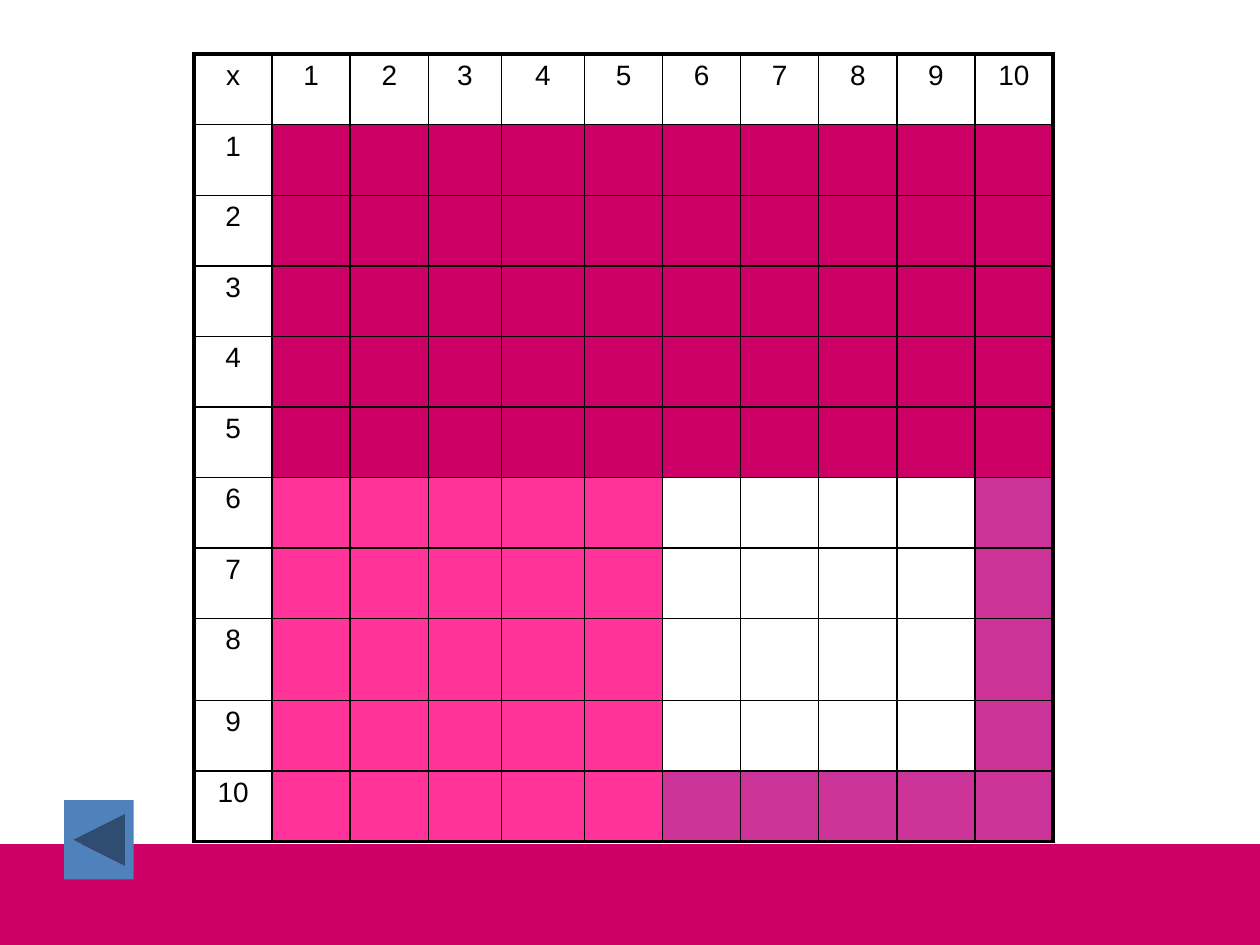
"""Build a slide with a shaded 10 by 10 multiplication grid and a back button."""
import lxml.etree
import pptx
import pptx.dml.color
import pptx.enum.shapes
import pptx.enum.text
import pptx.oxml.ns
import pptx.util

CRIMSON, PINK, PURPLE, BLUE, BLACK = "CC0066", "FF3399", "CC3399", "4F81BD", "000000"
HEADINGS = ["x"] + [str(number) for number in range(1, 11)]
COUNT = len(HEADINGS)
LAST = COUNT - 1
THIN, THICK = 1, 2.25


def paint(fill, colour):
    fill.solid()
    fill.fore_color.rgb = pptx.dml.color.RGBColor.from_string(colour)


def add_border(cell, side, points):
    name = pptx.oxml.ns.qn
    properties = cell._tc.get_or_add_tcPr()
    line = lxml.etree.SubElement(properties, name(f"a:ln{side}"), w=str(pptx.util.Pt(points)))
    solid = lxml.etree.SubElement(line, name("a:solidFill"))
    lxml.etree.SubElement(solid, name("a:srgbClr"), val=BLACK)


presentation = pptx.Presentation()
presentation.slide_width = pptx.util.Inches(10)
presentation.slide_height = pptx.util.Inches(7.5)
slide = presentation.slides.add_slide(presentation.slide_layouts[6])
shapes = slide.shapes
inches = pptx.util.Inches
preset = pptx.enum.shapes.MSO_SHAPE

band = shapes.add_shape(preset.RECTANGLE, 0, inches(6.7), presentation.slide_width, inches(0.8))
paint(band.fill, CRIMSON)

column_widths = [0.62] * COUNT
column_widths[3], column_widths[4] = 0.58, 0.66
row_heights = [0.56] * COUNT
row_heights[8] = 0.65
table = shapes.add_table(
    COUNT, COUNT, inches(1.54), inches(0.43), inches(sum(column_widths)), inches(sum(row_heights))
).table
table.first_row = False
table.horz_banding = False
for index in range(COUNT):
    table.columns[index].width = inches(column_widths[index])
    table.rows[index].height = inches(row_heights[index])

for row in range(COUNT):
    for column in range(COUNT):
        cell = table.cell(row, column)
        outer_sides = {"L": column == 0, "R": column == LAST, "T": row == 0, "B": row == LAST}
        for side, is_outer in outer_sides.items():
            add_border(cell, side, THICK if is_outer else THIN)

        if row == 0 or column == 0:
            cell.fill.background()
            paragraph = cell.text_frame.paragraphs[0]
            paragraph.alignment = pptx.enum.text.PP_ALIGN.CENTER
            run = paragraph.add_run()
            run.text = HEADINGS[row + column]
            run.font.name = "Arial"
            run.font.size = pptx.util.Pt(16)
            run.font.color.rgb = pptx.dml.color.RGBColor.from_string(BLACK)
        elif row <= 5:
            paint(cell.fill, CRIMSON)
        elif column <= 5:
            paint(cell.fill, PINK)
        elif LAST in (row, column):
            paint(cell.fill, PURPLE)
        else:
            cell.fill.background()

button = shapes.add_shape(
    preset.ACTION_BUTTON_BACK_OR_PREVIOUS, inches(0.51), inches(6.35), inches(0.55), inches(0.63)
)
paint(button.fill, BLUE)

for shape in (band, button):
    shape.line.fill.background()
    shape.shadow.inherit = False

presentation.save("out.pptx")
